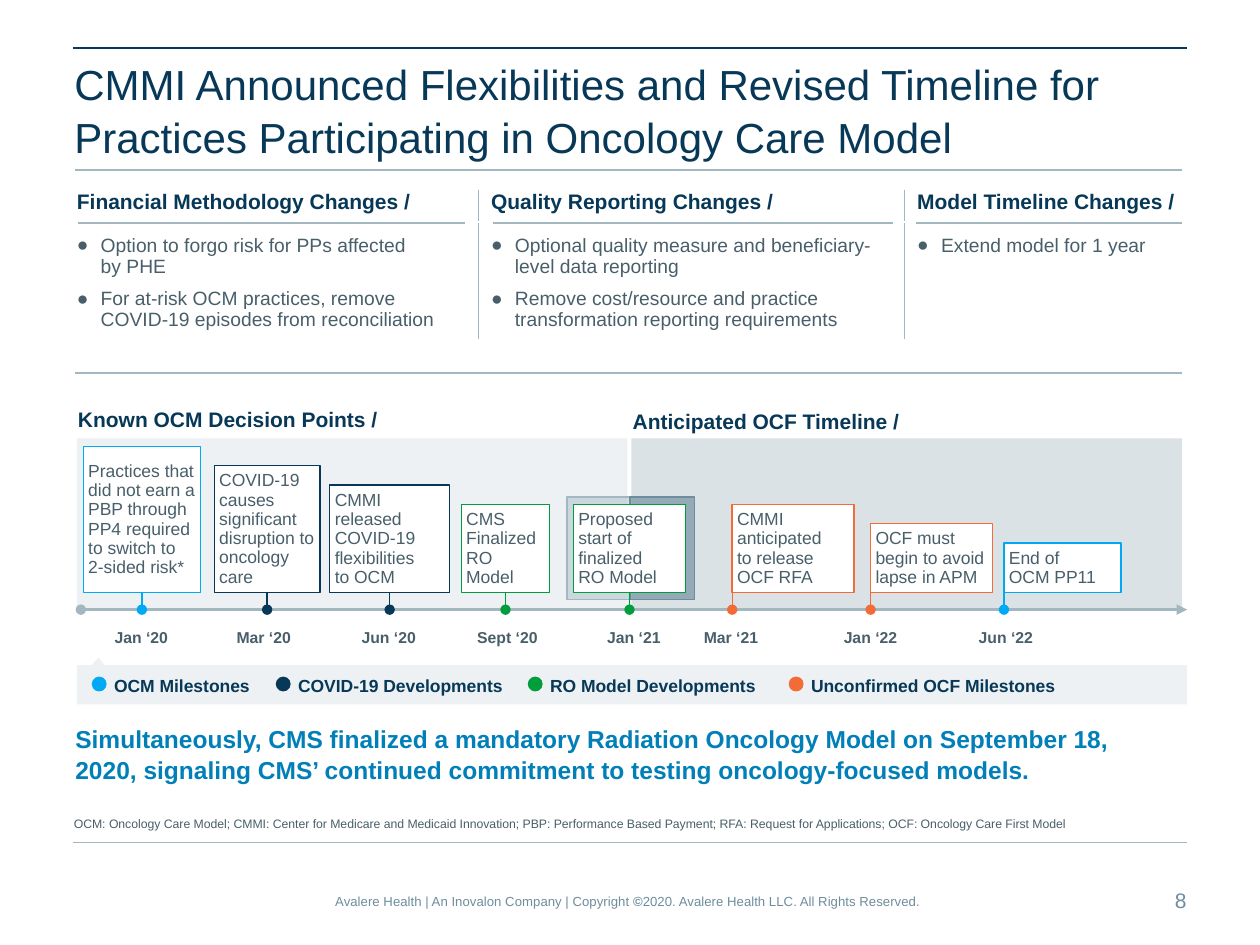
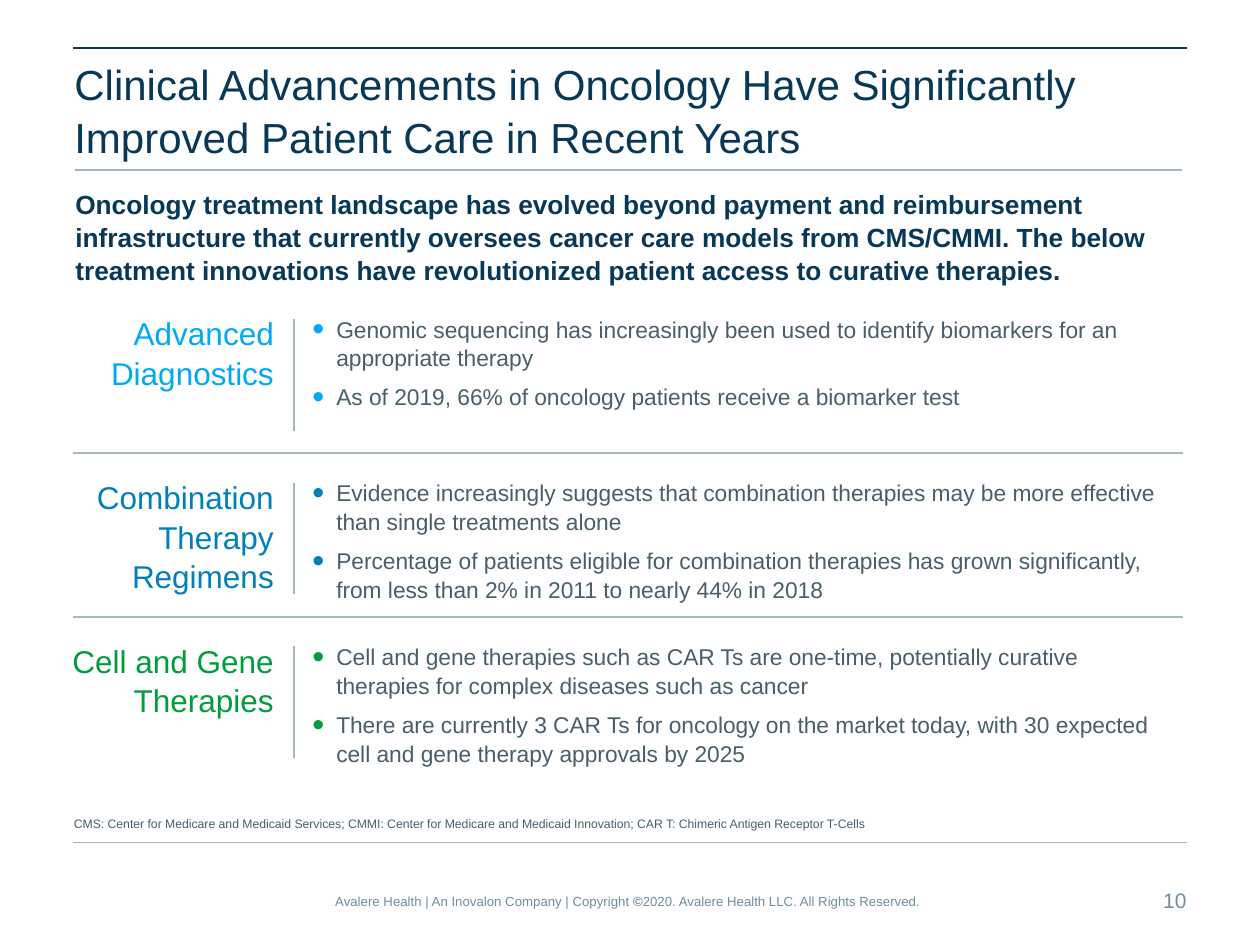
from dataclasses import dataclass

from lxml.etree import SubElement
from pptx import Presentation
from pptx.dml.color import RGBColor
from pptx.enum.shapes import MSO_CONNECTOR, MSO_SHAPE
from pptx.enum.text import MSO_ANCHOR, PP_ALIGN
from pptx.oxml import parse_xml
from pptx.oxml.ns import nsdecls, qn
from pptx.util import Cm, Pt


@dataclass(frozen=True)
class Theme:
    font: str = "Arial"
    navy: str = "073857"
    sky: str = "00A9F6"
    blue: str = "007FB8"
    green: str = "009D3D"
    orange: str = "F36B37"
    text: str = "485F6A"
    steel: str = "6E8D9D"
    rule: str = "A3B7C1"
    pale: str = "EDF1F3"
    mist: str = "DAE2E6"
    white: str = "FFFFFF"
    title_size: float = 24
    topic_size: float = 18
    intro_size: float = 15
    callout_size: float = 14
    body_size: float = 13
    heading_size: float = 12
    table_size: float = 11
    box_size: float = 10
    date_size: float = 9
    footer_size: float = 7.5
    note_size: float = 7
    spacing: float = 1.05


T = Theme()
LEFT, RIGHT = 1.47, 23.93
INNER_LEFT, INNER_RIGHT = 1.52, 23.83
AXIS_Y, BOX_BOTTOM = 12.29, 11.94
INSETS = (0.25, 0.13, 0.25, 0.13)
BOTTOM_SIDE, LEFT_SIDE = 2, 1

COPYRIGHT = [("Avalere Health | An Inovalon Company | Copyright ", False),
             ("©", True),
             ("2020. Avalere Health LLC. All Rights Reserved.", False)]

CHANGES = [
    ("Financial Methodology Changes /", 8.1, (1.57, 9.37),
     ["Option to forgo risk for PPs affected\vby PHE",
      "For at-risk OCM practices, remove COVID-19 episodes from reconciliation"]),
    ("Quality Reporting Changes /", 8.59, (9.93, 18.01),
     ["Optional quality measure and beneficiary-level data reporting",
      "Remove cost/resource and practice transformation reporting requirements"]),
    ("Model Timeline Changes /", 5.72, (18.47, INNER_RIGHT),
     ["Extend model for 1 year"]),
]

MILESTONES = [
    ("Jan ‘20", 2.06, 1.68, 2.36, 7, T.sky, BOTTOM_SIDE,
     ["Practices that did not earn a PBP through PP4 required to switch to 2-sided risk*"]),
    ("Mar ‘20", 4.52, 4.32, 2.13, 6, T.navy, BOTTOM_SIDE,
     ["COVID-19 causes significant disruption to oncology care"]),
    ("Jun ‘20", 7.04, 6.65, 2.41, 5, T.navy, BOTTOM_SIDE,
     ["CMMI released COVID-19 flexibilities", "to OCM"]),
    ("Sept ‘20", 9.37, 9.3, 1.78, 4, T.green, BOTTOM_SIDE,
     ["CMS Finalized RO Model"]),
    ("Jan ‘21", 11.99, 11.56, 2.26, 4, T.green, BOTTOM_SIDE,
     ["Proposed start of finalized", "RO Model"]),
    ("Mar ‘21", 13.94, 14.76, 2.46, 4, T.orange, LEFT_SIDE,
     ["CMMI anticipated", "to release OCF RFA"]),
    ("Jan ‘22", 16.76, 17.55, 2.46, 3, T.orange, LEFT_SIDE,
     ["OCF must begin to avoid lapse in APM"]),
    ("Jun ‘22", 19.48, 20.24, 2.36, 2, T.sky, LEFT_SIDE,
     ["End of", "OCM PP11"]),
]

LEGEND = [(1.85, T.sky, "OCM Milestones"),
          (5.56, T.navy, "COVID-19 Developments"),
          (10.64, T.green, "RO Model Developments"),
          (15.9, T.orange, "Unconfirmed OCF Milestones")]

TOPICS = [
    ("Advanced Diagnostics", T.sky,
     ["Genomic sequencing has increasingly been used to identify biomarkers for an appropriate therapy",
      "As of 2019, 66% of oncology patients receive a biomarker test"]),
    ("Combination Therapy Regimens", T.blue,
     ["Evidence increasingly suggests that combination therapies may be more effective than single treatments alone",
      "Percentage of patients eligible for combination therapies has grown significantly, from less than 2% in 2011 to nearly 44% in 2018"]),
    ("Cell and Gene Therapies", T.green,
     ["Cell and gene therapies such as CAR Ts are one-time, potentially curative therapies for complex diseases such as cancer",
      "There are currently 3 CAR Ts for oncology on the market today, with 30 expected cell and gene therapy approvals by 2025"]),
]


def rgb(color):
    return RGBColor.from_string(color)


def style_run(r, size, color, bold=False):
    r.font.name, r.font.size, r.font.bold = T.font, Pt(size), bold
    r.font.color.rgb = rgb(color)


def add_bullet(p, char, color, percent):
    pPr = p._p.get_or_add_pPr()
    pPr.set("marL", str(Cm(0.48)))
    pPr.set("indent", str(-Cm(0.48)))
    SubElement(SubElement(pPr, qn("a:buClr")), qn("a:srgbClr"), val=color)
    SubElement(pPr, qn("a:buSzPct"), val=str(percent * 1000))
    SubElement(pPr, qn("a:buFont"), typeface=T.font)
    SubElement(pPr, qn("a:buChar"), char=char)


def write(tf, lines, size, color, bold=False, align=PP_ALIGN.LEFT,
          spacing=T.spacing, bullet=None):
    for i, line in enumerate(lines):
        p = tf.paragraphs[0] if i == 0 else tf.add_paragraph()
        p.text = line
        p.alignment, p.line_spacing = align, spacing
        if bullet:
            p.space_after = Pt(6)
            add_bullet(p, *bullet)
        for r in p.runs:
            style_run(r, size, color, bold)


def set_insets(target, insets):
    (target.margin_left, target.margin_top,
     target.margin_right, target.margin_bottom) = map(Cm, insets)


def add_text(s, x, y, w, h, lines, size, color, insets=INSETS,
             anchor=MSO_ANCHOR.TOP, **style):
    tf = s.shapes.add_textbox(Cm(x), Cm(y), Cm(w), Cm(h)).text_frame
    tf.word_wrap, tf.vertical_anchor = True, anchor
    set_insets(tf, insets)
    write(tf, lines, size, color, **style)
    return tf


def add_shape(s, kind, x, y, w, h, fill, line=None, alpha=None):
    sp = s.shapes.add_shape(kind, Cm(x), Cm(y), Cm(w), Cm(h))
    sp.shadow.inherit = False
    sp.fill.solid()
    sp.fill.fore_color.rgb = rgb(fill)
    if alpha:
        color = sp._element.spPr.find(qn("a:solidFill"))[0]
        SubElement(color, qn("a:alpha"), val=str(alpha * 1000))
    if line:
        sp.line.color.rgb, sp.line.width = rgb(line), Pt(0.75)
    else:
        sp.line.fill.background()
    return sp


def add_line(s, x1, y1, x2, y2, color=T.rule, width=1, head=None, tail=None):
    c = s.shapes.add_connector(MSO_CONNECTOR.STRAIGHT, Cm(x1), Cm(y1), Cm(x2), Cm(y2))
    c.line.color.rgb, c.line.width = rgb(color), Pt(width)
    ln = c.line._get_or_add_ln()
    for tag, kind in (("a:headEnd", head), ("a:tailEnd", tail)):
        if kind:
            SubElement(ln, qn(tag), type=kind)
    SubElement(c._element.spPr, qn("a:effectLst"))
    return c


def add_frame(prs, title, note, number):
    s = prs.slides.add_slide(prs.slide_layouts[6])
    add_line(s, LEFT, 0.97, RIGHT, 0.97, T.navy, 0.75)
    add_line(s, LEFT, 16.99, RIGHT, 16.99, width=0.75)
    add_line(s, INNER_LEFT, 3.43, INNER_RIGHT, 3.43)
    add_text(s, 1.27, 1.04, 22.61, 1.24, [title], T.title_size, T.navy,
             insets=(0.23, 0.1, 0.23, 0.1))
    add_text(s, 1.24, 15.37, 20.98, 1.52, [note], T.note_size, T.text,
             anchor=MSO_ANCHOR.BOTTOM)
    add_text(s, 22.45, 17.63, 1.47, 1.02, [number], T.heading_size, T.steel,
             insets=(0.25, 0.13, 0, 0.13), anchor=MSO_ANCHOR.MIDDLE,
             align=PP_ALIGN.RIGHT)
    tf = add_text(s, 6.12, 17.86, 13.18, 0.58, [""], T.footer_size, T.steel,
                  insets=(0.13, 0.13, 0.25, 0.13), align=PP_ALIGN.CENTER)
    for part, bold in COPYRIGHT:
        r = tf.paragraphs[0].add_run()
        r.text = part
        style_run(r, T.footer_size, T.steel, bold)
    return s


def set_side_border(cell, side):
    cell._tc.get_or_add_tcPr().insert(0, parse_xml(
        f'<a:{side} {nsdecls("a")} w="{Pt(0.5)}"><a:solidFill>'
        f'<a:srgbClr val="{T.rule}"/></a:solidFill></a:{side}>'))


def add_changes_table(s):
    widths = [width for _, width, _, _ in CHANGES]
    table = s.shapes.add_table(2, len(CHANGES), Cm(1.55), Cm(3.84),
                               Cm(sum(widths)), Cm(2.97)).table
    table.first_row = table.horz_banding = False
    table.rows[0].height, table.rows[1].height = Cm(0.61), Cm(2.36)
    for i, (heading, width, (x1, x2), points) in enumerate(CHANGES):
        table.columns[i].width = Cm(width)
        head, body = table.cell(0, i), table.cell(1, i)
        inset = 0.25 if i else 0
        set_insets(head, (inset, 0, 0.25, 0.13))
        set_insets(body, (inset, 0.25, 0.38, 0))
        write(head.text_frame, [heading], T.heading_size, T.navy, True, spacing=1.0)
        write(body.text_frame, points, T.table_size, T.text, spacing=1.0,
              bullet=("●", T.text, 100))
        for cell in (head, body):
            cell.fill.background()
            if i < len(CHANGES) - 1:
                set_side_border(cell, "lnR")
            if i:
                set_side_border(cell, "lnL")
        add_line(s, x1, 4.5, x2, 4.5)


def add_milestone(s, date, date_x, x, w, line_count, color, side, lines):
    h = 0.21 + 0.39 * line_count
    box = add_shape(s, MSO_SHAPE.RECTANGLE, x, BOX_BOTTOM - h, w, h, T.white, color)
    tf = box.text_frame
    tf.word_wrap, tf.vertical_anchor = True, MSO_ANCHOR.MIDDLE
    set_insets(tf, (0.1,) * 4)
    write(tf, lines, T.box_size, T.text, spacing=Pt(11))
    stem_x = x + w / 2 if side == BOTTOM_SIDE else x
    stem = add_line(s, stem_x, AXIS_Y, stem_x, BOX_BOTTOM, color, 0.75, head="oval")
    stem.end_connect(box, side)
    add_text(s, date_x, 12.5, 2.2, 0.64, [date], T.date_size, T.text, bold=True)


def add_timeline(s):
    for x, color in ((1.55, T.pale), (12.73, T.mist)):
        add_shape(s, MSO_SHAPE.RECTANGLE, x, 8.84, 11.1, 3.45, color)
    for x, y, w, heading in ((0.99, 8.05, 7.21, "Known OCM Decision Points /"),
                             (11.99, 8.08, 6.91, "Anticipated OCF Timeline /")):
        add_text(s, x, y, w, 0.76, [heading], T.heading_size, T.navy,
                 bold=True, align=PP_ALIGN.CENTER)
    for x, w, color, alpha in ((11.43, 1.27, T.rule, 44), (12.7, 1.3, T.steel, 64)):
        add_shape(s, MSO_SHAPE.RECTANGLE, x, 10.02, w, 2.07, color, color, alpha)
    add_line(s, 1.63, AXIS_Y, RIGHT, AXIS_Y, width=1.5, head="oval", tail="triangle")
    for milestone in MILESTONES:
        add_milestone(s, *milestone)


def add_legend(s):
    add_shape(s, MSO_SHAPE.RECTANGLE, 1.55, 13.41, 22.38, 0.79, T.pale)
    add_shape(s, MSO_SHAPE.ISOSCELES_TRIANGLE, 1.8, 13.26, 0.36, 0.2, T.pale)
    for x, color, label in LEGEND:
        add_shape(s, MSO_SHAPE.OVAL, x, 13.64, 0.3, 0.3, color)
        add_text(s, x + 0.2, 13.46, 5.6, 0.69, [label], T.box_size, T.navy, bold=True)


def add_topic(s, top, name, color, points):
    add_text(s, 0.25, top, 5.52, 1.8, [name], T.topic_size, color, align=PP_ALIGN.RIGHT)
    add_line(s, 5.92, top + 0.26, 5.92, top + 2.51)
    add_text(s, 6.05, top + 0.03, 17.8, 2.69, points, T.body_size, T.text,
             bullet=("•", color, 150))


def build_timeline_slide(prs):
    s = add_frame(
        prs, "CMMI Announced Flexibilities and Revised Timeline for Practices Participating in Oncology Care Model",
        "OCM: Oncology Care Model; CMMI: Center for Medicare and Medicaid Innovation; PBP: Performance Based Payment; "
        "RFA: Request for Applications; OCF: Oncology Care First Model", "8")
    add_changes_table(s)
    add_line(s, INNER_LEFT, 7.52, INNER_RIGHT, 7.52)
    add_timeline(s)
    add_legend(s)
    add_text(s, 1.27, 14.43, 22.61, 1.45,
             ["Simultaneously, CMS finalized a mandatory Radiation Oncology Model on September 18, 2020, "
              "signaling CMS’ continued commitment to testing oncology-focused models."],
             T.callout_size, T.blue, bold=True)


def build_advancements_slide(prs):
    s = add_frame(
        prs, "Clinical Advancements in Oncology Have Significantly Improved Patient Care in Recent Years",
        "CMS: Center for Medicare and Medicaid Services; CMMI: Center for Medicare and Medicaid Innovation; "
        "CAR T: Chimeric Antigen Receptor T-Cells", "10")
    add_text(s, 1.27, 3.63, 22.35, 2.18,
             ["Oncology treatment landscape has evolved beyond payment and reimbursement infrastructure that "
              "currently oversees cancer care models from CMS/CMMI. The below treatment innovations have "
              "revolutionized patient access to curative therapies."],
             T.intro_size, T.navy, bold=True)
    for i, topic in enumerate(TOPICS):
        top = 6.17 + 3.3 * i
        add_topic(s, top, *topic)
        if i:
            add_line(s, LEFT, top - 0.33, 23.85, top - 0.33)


def main():
    prs = Presentation()
    prs.slide_width, prs.slide_height = Cm(25.4), Cm(19.05)
    build_timeline_slide(prs)
    build_advancements_slide(prs)
    prs.save("out.pptx")


if __name__ == "__main__":
    main()
